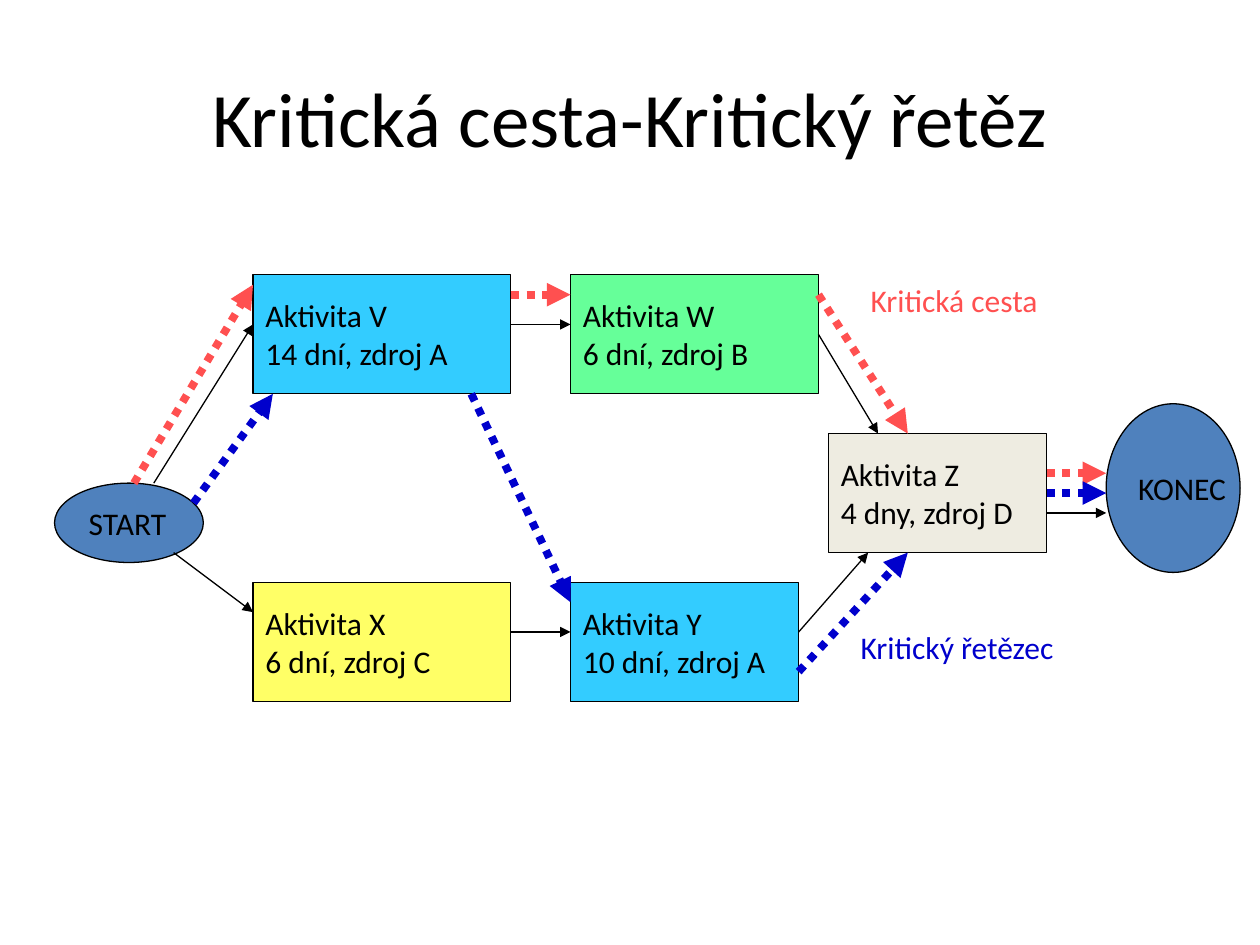
from pptx import Presentation
from pptx.dml.color import RGBColor
from pptx.enum.dml import MSO_LINE
from pptx.enum.shapes import MSO_CONNECTOR, MSO_SHAPE
from pptx.enum.text import MSO_ANCHOR, MSO_AUTO_SIZE, PP_ALIGN
from pptx.oxml.ns import qn
from pptx.util import Inches, Mm, Pt
from lxml.etree import SubElement

COLORS = {
    "black": "000000", "node": "4F81BD", "source_a": "33CCFF",
    "source_b": "66FF99", "source_c": "FFFF66", "source_d": "EEECE1",
    "path": "FF5050", "chain": "0000CC",
}
RGB = {name: RGBColor.from_string(code) for name, code in COLORS.items()}

# Grid: 4 mm cells, origin at the top left corner of activity V
CELL, LEFT, TOP = 4, 51, 55.4


def grid(col, row):
    return Mm(LEFT + CELL * col), Mm(TOP + CELL * row)


def write(sp, lines, color, size, align, frame):
    tf = sp.text_frame
    for name, value in frame.items():
        setattr(tf, name, value)
    tf.text = "\n".join(lines)
    for p in tf.paragraphs:
        p.alignment = align
        font = {"name": "Calibri", "size": Pt(size)}
        for name, value in font.items():
            setattr(p.runs[0].font, name, value)
        p.runs[0].font.color.rgb = RGB[color]


prs = Presentation()
prs.slide_width, prs.slide_height = Inches(10), Inches(7.5)
s = prs.slides.add_slide(prs.slide_layouts[5])

# Title
title = s.shapes.title
place = {"left": 0.05, "width": 0.9}
for name, share in place.items():
    setattr(title, name, int(prs.slide_width * share))
title.top, title.height = int(prs.slide_height * 0.04), Inches(1.25)
write(title, ["Kritická cesta-Kritický řetěz"], "black", 44, PP_ALIGN.CENTER,
      {"vertical_anchor": MSO_ANCHOR.MIDDLE})

# Nodes: key, shape, column, row, columns wide, rows high, fill, text
RECT, OVAL = MSO_SHAPE.RECTANGLE, MSO_SHAPE.OVAL
nodes = [
    ("START", OVAL, -10, 10.5, 7.5, 4, "node", ["START"]),
    ("V", RECT, 0, 0, 13, 6, "source_a", ["Aktivita V", "14 dní, zdroj A"]),
    ("W", RECT, 16, 0, 12.5, 6, "source_b", ["Aktivita W", "6 dní, zdroj B"]),
    ("X", RECT, 0, 15.5, 13, 6, "source_c", ["Aktivita X", "6 dní, zdroj C"]),
    ("Y", RECT, 16, 15.5, 11.5, 6, "source_a", ["Aktivita Y", "10 dní, zdroj A"]),
    ("Z", RECT, 29, 8, 11, 6, "source_d", ["Aktivita Z", "4 dny, zdroj D"]),
    ("KONEC", OVAL, 43, 6.5, 6.75, 8.5, "node", ["KONEC"]),
]
shapes = {}
for key, kind, col, row, cols, rows, fill, lines in nodes:
    sp = s.shapes.add_shape(kind, *grid(col, row), Mm(CELL * cols), Mm(CELL * rows))
    sp.shadow.inherit = False
    sp.fill.solid()
    sp.fill.fore_color.rgb = RGB[fill]
    sp.line.color.rgb = RGB["black"]
    sp.line.width = Pt(0.75)
    write(sp, lines, "black", 18, PP_ALIGN.LEFT,
          {"vertical_anchor": MSO_ANCHOR.MIDDLE, "word_wrap": False})
    shapes[key] = sp

# Arrows: start and end on the grid, node joined at its right side
arrows = {
    "black": [
        ((-5, 10.5), (0, 2.5), None), ((-4, 14), (0, 17), None),
        ((13, 18), (16, 18), None), ((13, 2.5), (16, 2.5), None),
        ((40, 12), (43, 12), None), ((28.5, 3), (31.5, 8), "W"),
        ((27.5, 18), (31, 14), None),
    ],
    "path": [
        ((-6, 10.5), (0, 0.5), None), ((13, 1), (16, 1), None),
        ((28.5, 1), (33, 8), None), ((40, 10), (43, 10), None),
    ],
    "chain": [
        ((-3, 11.5), (1, 6), None), ((11, 6), (16, 16.5), None),
        ((27.5, 20), (33, 14), None), ((40, 11), (43, 11), "Z"),
    ],
}
for color, routes in arrows.items():
    for start, end, joined in routes:
        line = s.shapes.add_connector(MSO_CONNECTOR.STRAIGHT, *grid(*start), *grid(*end))
        if joined:
            line.begin_connect(shapes[joined], 3)
        line.line.color.rgb = RGB[color]
        line.line.width = Pt(0.75 if color == "black" else 4.5)
        if color != "black":
            line.line.dash_style = MSO_LINE.ROUND_DOT
        SubElement(line.line._get_or_add_ln(), qn("a:tailEnd"), type="triangle")
        SubElement(line._element.spPr, qn("a:effectLst"))

# Labels of the two routes
labels = [
    ("Kritická cesta", 30.5, 0, 13, "path"),
    ("Kritický řetězec", 30, 17.5, 14.85, "chain"),
]
for text, col, row, cols, color in labels:
    sp = s.shapes.add_textbox(*grid(col, row), Mm(CELL * cols), Inches(0.5))
    write(sp, [text], color, 18, PP_ALIGN.LEFT,
          {"word_wrap": False, "auto_size": MSO_AUTO_SIZE.SHAPE_TO_FIT_TEXT})

prs.save("out.pptx")
